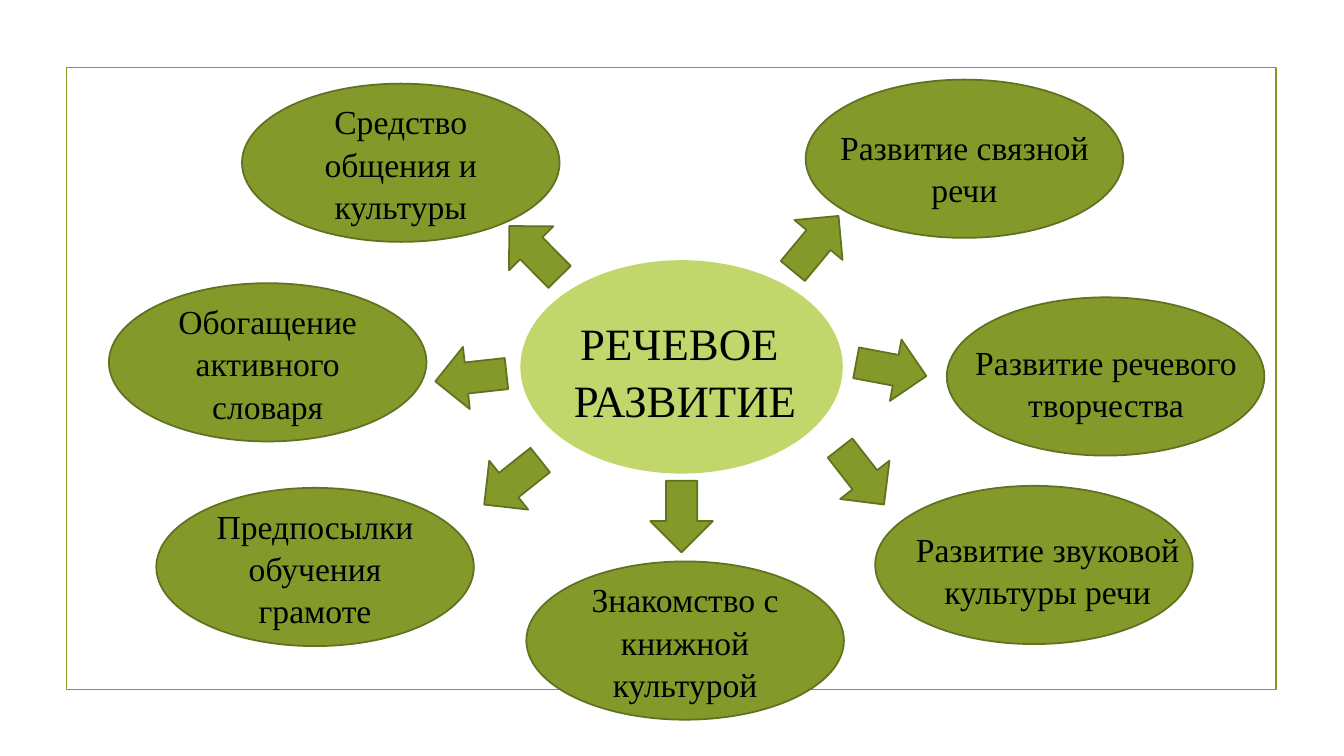
from dataclasses import dataclass

from pptx import Presentation
from pptx.dml.color import RGBColor
from pptx.enum.shapes import MSO_SHAPE as Shape
from pptx.enum.text import MSO_ANCHOR as Anchor, PP_ALIGN as Align
from pptx.util import Pt

EMU_PER_PX = 9144


def px(*values):
    return [value * EMU_PER_PX for value in values]


@dataclass(frozen=True)
class Theme:
    font: str = "Times New Roman"
    text: RGBColor = RGBColor.from_string("000000")
    olive: RGBColor = RGBColor.from_string("83992A")
    dark: RGBColor = RGBColor.from_string("61711F")
    lime: RGBColor = RGBColor.from_string("C1D66B")
    title_size: int = 32
    label_size: int = 24
    line_width: float = 1.25


class Diagram:
    TOPIC_SIZE = (315, 157)
    ARROW_SIZE = (62, 71)

    def __init__(self, slide, theme):
        self.shapes = slide.shapes
        self.theme = theme

    def shape(self, kind, box, fill, line):
        sp = self.shapes.add_shape(kind, *px(*box))
        sp.shadow.inherit = False
        if fill is None:
            sp.fill.background()
        else:
            sp.fill.solid()
            sp.fill.fore_color.rgb = fill
        sp.line.color.rgb = line
        sp.line.width = Pt(self.theme.line_width)
        return sp

    def set_text(self, sp, text, size, anchor, wrap=True):
        tf = sp.text_frame
        tf.text = text
        tf.word_wrap = wrap
        tf.vertical_anchor = anchor
        for p in tf.paragraphs:
            p.alignment = Align.CENTER
            p.line_spacing = 1.05
            for r in p.runs:
                r.font.name = self.theme.font
                r.font.size = Pt(size)
                r.font.color.rgb = self.theme.text

    def frame(self, box):
        self.shape(Shape.RECTANGLE, box, None, self.theme.olive)

    def center(self, box):
        self.shape(Shape.OVAL, box, self.theme.lime, self.theme.lime)

    def topic(self, left, top, text=""):
        sp = self.shape(Shape.OVAL, (left, top, *self.TOPIC_SIZE),
                        self.theme.olive, self.theme.dark)
        if text:
            self.set_text(sp, text, self.theme.label_size, Anchor.MIDDLE)

    def label(self, box, text, size, wrap=True):
        sp = self.shapes.add_textbox(*px(*box))
        self.set_text(sp, text, size, Anchor.TOP, wrap)

    def arrow(self, left, top, angle):
        sp = self.shape(Shape.DOWN_ARROW, (left, top, *self.ARROW_SIZE),
                        self.theme.olive, self.theme.dark)
        sp.rotation = angle


TOPICS = [
    (108, 281, "Обогащение активного словаря"),
    (522, 557, "Знакомство с книжной культурой"),
    (155, 484, "Предпосылки обучения грамоте"),
    (240, 83, "Средство общения и культуры"),
    (799, 79),
    (939, 295),
    (868, 482),
]
LABELS = [
    ((816, 119, 281, 91), "Развитие связной речи"),
    ((951, 332, 292, 91), "Развитие речевого творчества"),
    ((895, 518, 288, 91), "Развитие звуковой культуры речи"),
]
ARROWS = [
    (778, 206, 219.7),
    (499, 214, 135.3),
    (853, 331, 280.7),
    (436, 339, 83.7),
    (824, 437, 322.1),
    (645, 477, 0),
    (477, 443, 51.5),
]


def main():
    prs = Presentation()
    prs.slide_width, prs.slide_height = px(1333, 750)
    theme = Theme()
    diagram = Diagram(prs.slides.add_slide(prs.slide_layouts[6]), theme)
    diagram.frame((66, 67, 1200, 617))
    diagram.center((517, 259, 318, 210))
    diagram.label((553, 306, 253, 118), "РЕЧЕВОЕ \nРАЗВИТИЕ",
                  theme.title_size, wrap=False)
    for topic in TOPICS:
        diagram.topic(*topic)
    for box, text in LABELS:
        diagram.label(box, text, theme.label_size)
    for arrow in ARROWS:
        diagram.arrow(*arrow)
    prs.save("out.pptx")


if __name__ == "__main__":
    main()
